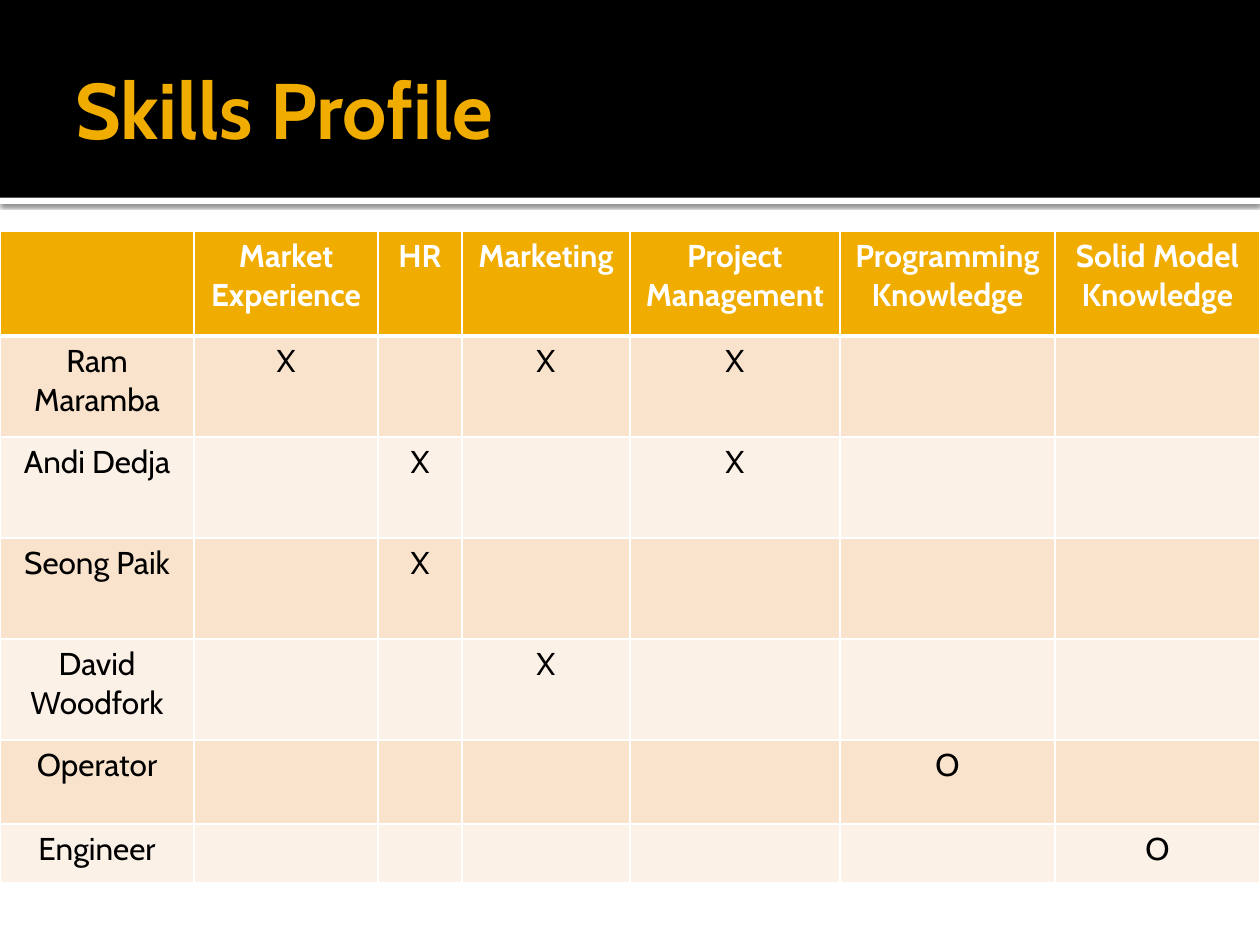
from typing import NamedTuple

from lxml import etree
from pptx import Presentation
from pptx import util as u
from pptx.dml.color import RGBColor
from pptx.enum import shapes, text
from pptx.oxml import ns

Pt = u.Pt
FONT = "Cabin"
GOLD, WHITE, BLACK = "F0AD00", "FFFFFF", "000000"
BANDS = ("F9E3CC", "FCF1E7")


class Band(NamedTuple):
    top: float
    height: float
    color: str
    shadow: bool


class Row(NamedTuple):
    label: str
    height: float
    mark: str
    columns: tuple


BANNER = (Band(113, 3.6, WHITE, True), Band(0, 113, BLACK, False))
HEADERS = ("", "Market Experience", "HR", "Marketing", "Project Management",
           "Programming\nKnowledge", "Solid Model\nKnowledge")
WIDTHS = (110.9, 105.1, 48, 96, 120, 122.9, 117.1)
HEADER_HEIGHT = 60
ROWS = (
    Row("Ram Maramba", 57.75, "X", (1, 3, 4)),
    Row("Andi Dedja", 57.75, "X", (2, 4)),
    Row("Seong Paik", 57.75, "X", (2,)),
    Row("David Woodfork", 57.75, "X", (3,)),
    Row("Operator", 48, "O", (5,)),
    Row("Engineer", 33.4, "O", (6,)),
)


def rgb(color: str) -> RGBColor:
    return RGBColor.from_string(color)


def add_node(parent, tag: str, **attrs):
    node = etree.SubElement(parent, ns.qn(tag))
    for name, value in attrs.items():
        node.set(name, str(value))
    return node


def add_run(p, words: str, size: float, color: str, bold: bool) -> None:
    r = p.add_run()
    r.text = words
    for name, value in {"name": FONT, "size": Pt(size), "bold": bold}.items():
        setattr(r.font, name, value)
    r.font.color.rgb = rgb(color)


def add_band(s, band: Band) -> None:
    sp = s.shapes.add_shape(shapes.MSO_SHAPE.RECTANGLE, 0, Pt(band.top),
                            Pt(720), Pt(band.height))
    sp.shadow.inherit = False
    sp.fill.solid()
    sp.fill.fore_color.rgb = rgb(band.color)
    sp.line.fill.background()
    if band.shadow:
        effects = sp._element.spPr.find(ns.qn("a:effectLst"))
        shadow = add_node(effects, "a:outerShdw", blurRad=Pt(2.5), dist=Pt(0.8),
                          dir=90 * 60000, algn="tl", rotWithShape=0)
        color = add_node(shadow, "a:srgbClr", val=BLACK)
        add_node(color, "a:alpha", val=60000)


def add_title(s, words: str) -> None:
    sp = s.shapes.add_textbox(Pt(36), Pt(12.25), Pt(648), Pt(98.6))
    tf = sp.text_frame
    settings = {"word_wrap": True, "vertical_anchor": text.MSO_ANCHOR.MIDDLE,
                "margin_left": Pt(7.2), "margin_right": Pt(3.6),
                "margin_top": Pt(3.6), "margin_bottom": Pt(3.6)}
    for name, value in settings.items():
        setattr(tf, name, value)
    add_run(tf.paragraphs[0], words, 45, GOLD, True)


def set_borders(cell, widths: dict) -> None:
    tcPr = cell._tc.get_or_add_tcPr()
    for i, (side, width) in enumerate(widths.items()):
        line = etree.Element(ns.qn("a:ln" + side), w=str(Pt(width)))
        add_node(add_node(line, "a:solidFill"), "a:srgbClr", val=WHITE)
        tcPr.insert(i, line)  # borders precede the fill


def fill_cell(cell, words: str, fill: str, color: str, bold: bool,
              top: float, bottom: float) -> None:
    cell.fill.solid()
    cell.fill.fore_color.rgb = rgb(fill)
    set_borders(cell, {"L": 1, "R": 1, "T": top, "B": bottom})
    tf = cell.text_frame
    for i, part in enumerate(words.split("\n") if words else ()):
        p = tf.add_paragraph() if i else tf.paragraphs[0]
        p.alignment = text.PP_ALIGN.CENTER
        add_run(p, part, 18, color, bold)


def add_skills_table(s) -> None:
    heights = [HEADER_HEIGHT] + [row.height for row in ROWS]
    table = s.shapes.add_table(len(heights), len(WIDTHS), 0, Pt(132),
                               Pt(sum(WIDTHS)), Pt(sum(heights))).table
    for column, width in zip(table.columns, WIDTHS):
        column.width = Pt(width)
    for line, height in zip(table.rows, heights):
        line.height = Pt(height)
    # Header row
    for c, header in enumerate(HEADERS):
        fill_cell(table.cell(0, c), header, GOLD, WHITE, True, 1, 3)
    # One banded row per person
    for i, row in enumerate(ROWS):
        for c in range(len(WIDTHS)):
            words = row.label if c == 0 else row.mark if c in row.columns else ""
            fill_cell(table.cell(i + 1, c), words, BANDS[i % 2], BLACK, False,
                      1 if i else 3, 1)


def main() -> None:
    prs = Presentation()
    prs.slide_width, prs.slide_height = Pt(720), Pt(540)
    s = prs.slides.add_slide(prs.slide_layouts[6])
    s.background.fill.solid()
    s.background.fill.fore_color.rgb = rgb(WHITE)
    # Banner and title
    for band in BANNER:
        add_band(s, band)
    add_title(s, "Skills Profile")
    # Skills matrix
    add_skills_table(s)
    prs.save("out.pptx")


if __name__ == "__main__":
    main()
